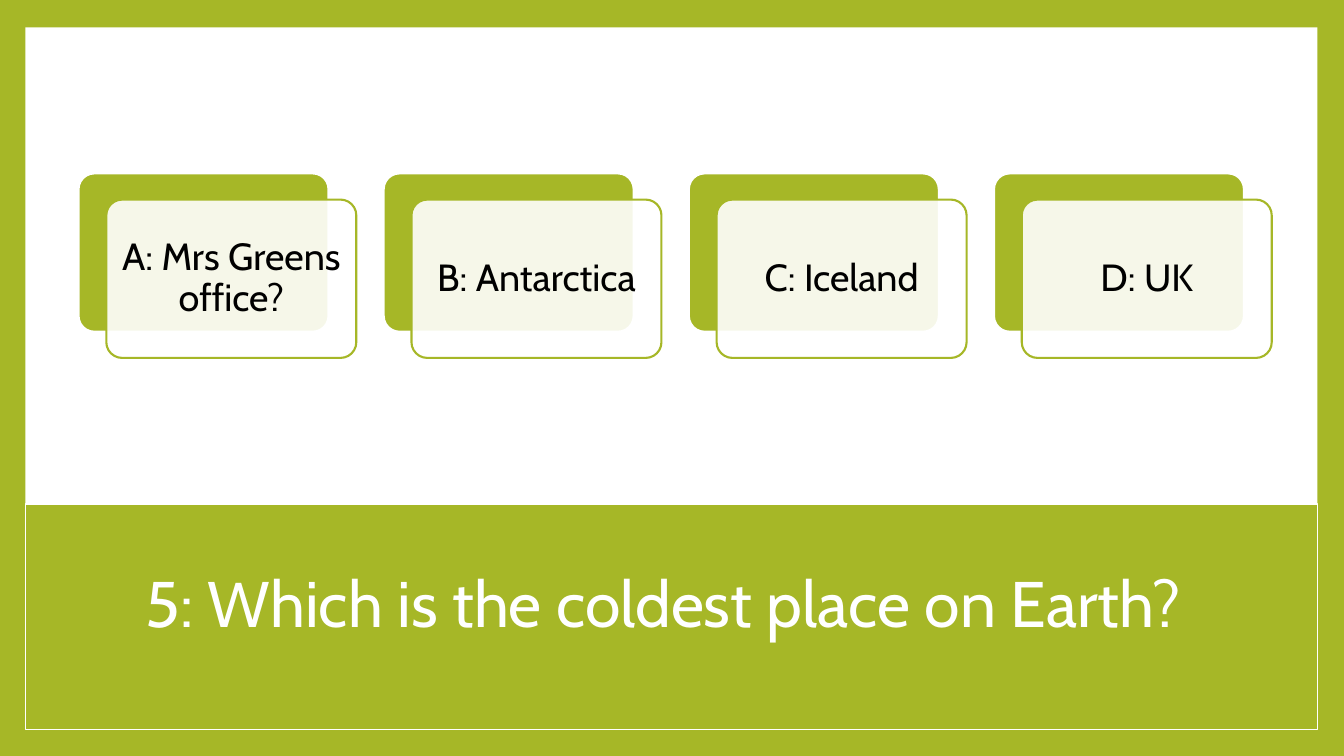
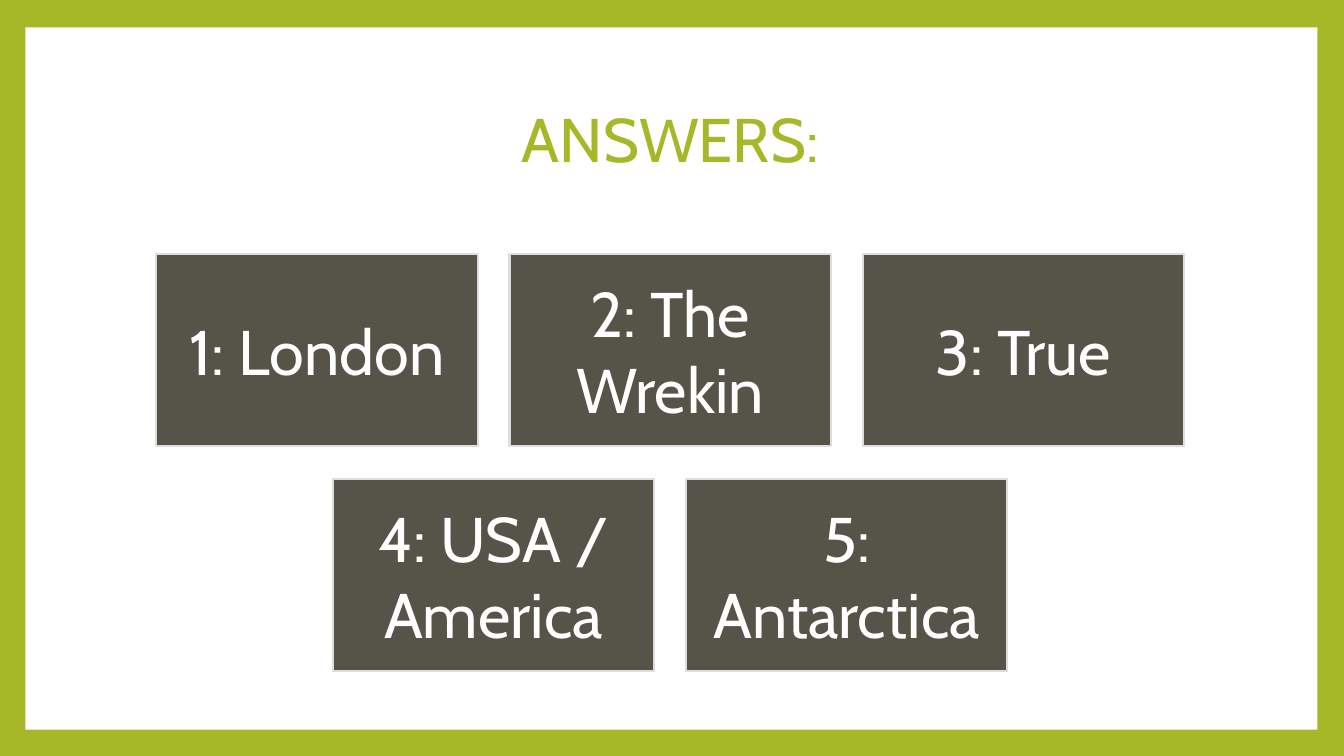
from dataclasses import dataclass

from lxml.etree import SubElement
from pptx import Presentation
from pptx.dml.color import RGBColor
from pptx.enum.shapes import MSO_SHAPE
from pptx.enum.text import MSO_ANCHOR, PP_ALIGN
from pptx.oxml.ns import qn
from pptx.util import Cm, Pt


@dataclass(frozen=True)
class Theme:
    font: str = "Cabin"
    green: RGBColor = RGBColor(0xA6, 0xB7, 0x27)
    white: RGBColor = RGBColor(0xFF, 0xFF, 0xFF)
    black: RGBColor = RGBColor(0x00, 0x00, 0x00)
    stone: RGBColor = RGBColor(0x56, 0x53, 0x49)
    rim: RGBColor = RGBColor(0xDD, 0xDD, 0xDD)
    ask: Pt = Pt(46)
    head: Pt = Pt(44)
    option: Pt = Pt(27)
    answer: Pt = Pt(45)


theme = Theme()


def write(shape, text, size, color, spacing=1.0, inset=0.25):
    """Set centred text; inset is the margin on all sides in cm."""
    frame = shape.text_frame
    frame.text = text
    frame.word_wrap = True
    frame.vertical_anchor = MSO_ANCHOR.MIDDLE
    frame.margin_left = frame.margin_right = Cm(inset)
    frame.margin_top = frame.margin_bottom = Cm(inset)
    for para in frame.paragraphs:
        para.alignment = PP_ALIGN.CENTER
        para.line_spacing = spacing
        para.font.name = theme.font
        para.font.size = size
        para.font.color.rgb = color


def box(slide, kind, left, top, width, height, fill, line=None, weight=1.5):
    """Add a flat shape, with lengths in cm and the line weight in points."""
    shape = slide.shapes.add_shape(kind, Cm(left), Cm(top), Cm(width), Cm(height))
    shape.shadow.inherit = False
    shape.fill.solid()
    shape.fill.fore_color.rgb = fill
    if line is None:
        shape.line.fill.background()
    else:
        shape.line.color.rgb = line
        shape.line.width = Pt(weight)
    return shape


deck = Presentation()
deck.slide_width, deck.slide_height = Cm(33.87), Cm(19.05)
back = deck.slide_master.background.fill
back.solid()
back.fore_color.rgb = theme.green

# Shared frame: white panel, optional band, title on top
EDGE, WIDE = 0.64, 32.56
pages = []
for text, top, size, color, band in [
    ("5: Which is the coldest place on Earth? ", 13.41, theme.ask, theme.white, True),
    ("ANSWERS:", 1.7, theme.head, theme.green, False),
]:
    slide = deck.slides.add_slide(deck.slide_layouts[5])
    box(slide, MSO_SHAPE.RECTANGLE, EDGE, 0.69, WIDE, 17.7, theme.white)
    if band:
        box(slide, MSO_SHAPE.RECTANGLE, EDGE, 12.7, WIDE, 5.69,
            theme.green, theme.white, 1)
    title = slide.shapes.title
    title.left, title.top = Cm(3.18), Cm(top)
    title.width, title.height = Cm(27.43), Cm(3.76)
    write(title, text, size, color, spacing=0.9)
    title.element.getparent().append(title.element)
    pages.append(slide)
quiz, key = pages

# Options: a green card with a translucent card in front
options = ["A: Mrs Greens office?", "B: Antarctica", "C: Iceland", "D: UK"]
for col, text in enumerate(options):
    left, top = 1.98 + col * 7.69, 4.37
    rear = box(quiz, MSO_SHAPE.ROUNDED_RECTANGLE, left, top, 6.3, 3.99,
               theme.green, theme.white)
    card = box(quiz, MSO_SHAPE.ROUNDED_RECTANGLE, left + 0.7, top + 0.66, 6.3, 3.99,
               theme.white, theme.green)
    for shape in (rear, card):
        shape.adjustments[0] = 0.1
    tint = card.element.spPr.find(qn("a:solidFill"))[0]
    SubElement(tint, qn("a:alpha"), val="90000")
    write(card, text, theme.option, theme.black, spacing=0.9, inset=0.28)

# Answers: the second row is centred under the first
rows = [["1: London", "2: The Wrekin", "3: True"],
        ["4: USA / America", "5: Antarctica"]]
STEP = 8.9
for row, texts in enumerate(rows):
    start = 3.94 + (len(rows[0]) - len(texts)) * STEP / 2
    for col, text in enumerate(texts):
        tile = box(key, MSO_SHAPE.RECTANGLE, start + col * STEP, 6.4 + row * 5.67,
                   8.1, 4.85, theme.stone, theme.rim)
        write(tile, text, theme.answer, theme.white, inset=0.48)

deck.save("out.pptx")
